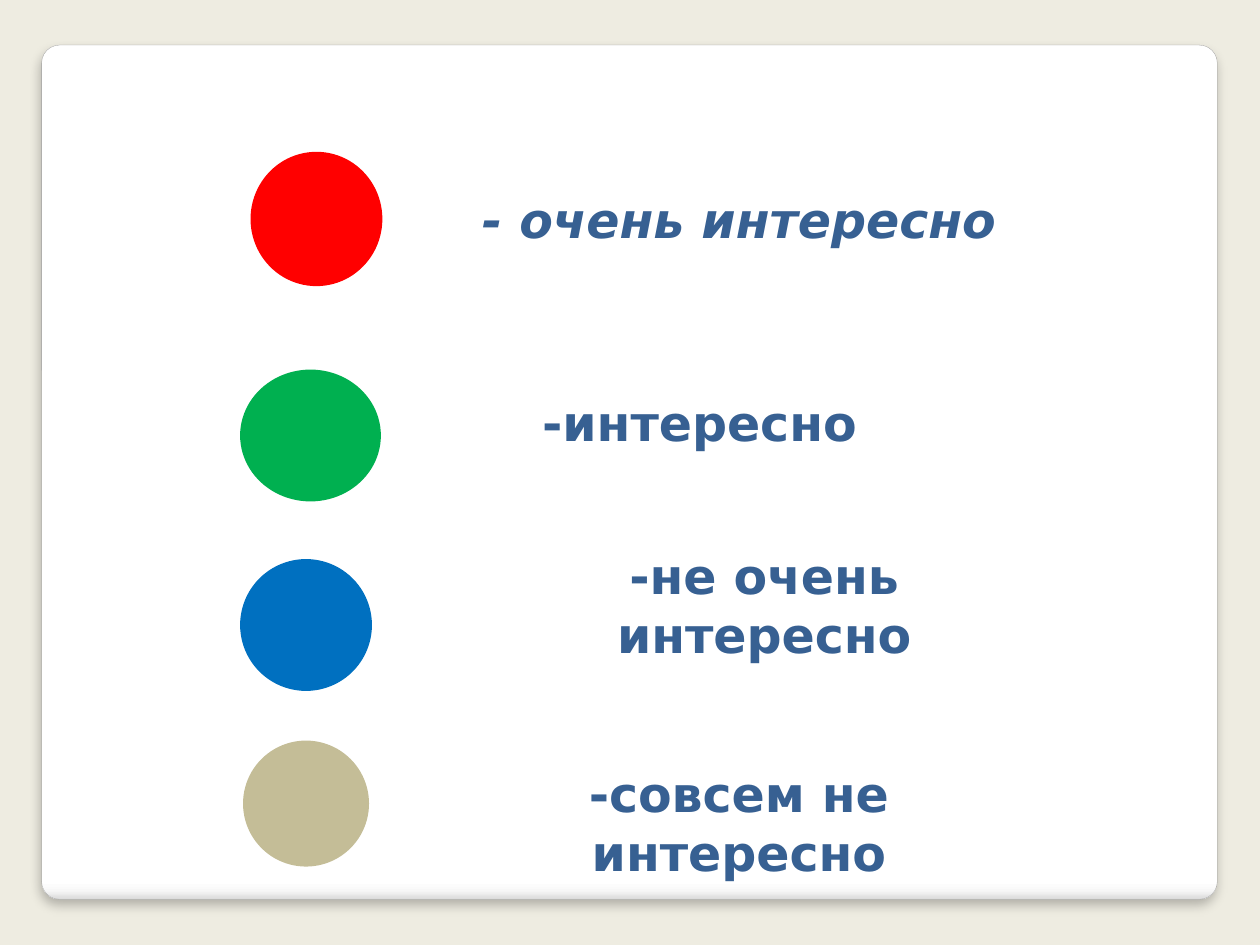
from collections import namedtuple
from dataclasses import dataclass

from lxml.etree import SubElement
from pptx import Presentation
from pptx.dml.color import RGBColor
from pptx.enum.shapes import MSO_SHAPE as Preset
from pptx.enum.text import MSO_ANCHOR as Anchor, PP_ALIGN as Align
from pptx.oxml.ns import qn
from pptx.util import Cm, Pt


@dataclass(frozen=True)
class Theme:
    background: str = "EEECE1"
    card_stops: tuple = ((0, "FFFFFF"), (98, "FFFFFF"), (99, "F7F7F7"), (100, "DADADA"))
    card_edge: str = "A4A4A4"
    shadow: str = "000000"
    label: str = "376092"
    font: str = "DejaVu Sans"
    label_size: float = 28
    ring_width: float = 3.35
    edge_width: float = 0.16


THEME = Theme()
Box = namedtuple("Box", "left top width height")
Rating = namedtuple("Rating", "text color circle label ringed italic")

# All boxes are in centimetres; circles sit in the card, labels start from their circle
CARD = Box(0.84, 0.91, 23.7, 17.22)
RATINGS = (
    Rating("- очень интересно", "FF0000", Box(4.27, 2.21, 2.54, 2.59),
           Box(3.79, 0, 11.99, 2.59), True, True),
    Rating("-интересно", "00B050", Box(4.06, 6.6, 2.72, 2.54),
           Box(4.4, -0.58, 9.6, 3.15), True, False),
    Rating("-не очень интересно", "0070C0", Box(4.06, 10.42, 2.54, 2.54),
           Box(5.82, -0.41, 9.37, 2.54), True, False),
    Rating("-совсем не интересно", "C4BD97", Box(4.06, 14.02, 2.54, 2.54),
           Box(5.51, 0.38, 8.97, 2.54), False, False),
)


def rgb(code):
    return RGBColor.from_string(code)


def within(outer, inner):
    return inner._replace(left=outer.left + inner.left, top=outer.top + inner.top)


def lengths(box):
    return [Cm(value) for value in box]


def add_card(slide, box):
    card = slide.shapes.add_shape(Preset.ROUNDED_RECTANGLE, *lengths(box))
    card.adjustments[0] = 0.021
    card.line.color.rgb = rgb(THEME.card_edge)
    card.line.width = Pt(THEME.edge_width)

    # Vertical gradient that darkens at the bottom edge
    card.fill.gradient()
    card.fill.gradient_angle = 270
    properties = card._element.spPr
    stops = properties.find(qn("a:gradFill")).find(qn("a:gsLst"))
    for stop in list(stops):
        stops.remove(stop)
    for position, color in THEME.card_stops:
        stop = SubElement(stops, qn("a:gs"), pos=str(position * 1000))
        SubElement(stop, qn("a:srgbClr"), val=color)

    # Soft shadow below
    card.shadow.inherit = False
    shadow = SubElement(properties.find(qn("a:effectLst")), qn("a:outerShdw"),
                        blurRad=str(Pt(6)), dist=str(Pt(4)), dir="5400000",
                        algn="tl", rotWithShape="0")
    tint = SubElement(shadow, qn("a:srgbClr"), val=THEME.shadow)
    SubElement(tint, qn("a:alpha"), val="25000")


def add_rating(slide, box, rating):
    # Colour mark
    circle = slide.shapes.add_shape(Preset.OVAL, *lengths(box))
    circle.shadow.inherit = False
    circle.fill.solid()
    circle.fill.fore_color.rgb = rgb(rating.color)
    if rating.ringed:
        circle.line.color.rgb = rgb(rating.color)
        circle.line.width = Pt(THEME.ring_width)
    else:
        circle.line.fill.background()

    # Meaning of the colour
    label = slide.shapes.add_textbox(*lengths(within(box, rating.label)))
    frame = label.text_frame
    frame.word_wrap = True
    frame.vertical_anchor = Anchor.MIDDLE
    frame.text = rating.text
    paragraph = frame.paragraphs[0]
    paragraph.alignment = Align.CENTER
    font = paragraph.runs[0].font
    font.name = THEME.font
    font.size = Pt(THEME.label_size)
    font.bold = True
    font.italic = rating.italic
    font.color.rgb = rgb(THEME.label)


def main():
    deck = Presentation()
    deck.slide_width, deck.slide_height = Cm(25.4), Cm(19.05)
    slide = deck.slides.add_slide(deck.slide_layouts[6])
    slide.background.fill.solid()
    slide.background.fill.fore_color.rgb = rgb(THEME.background)
    add_card(slide, CARD)
    for rating in RATINGS:
        add_rating(slide, within(CARD, rating.circle), rating)
    deck.save("out.pptx")


if __name__ == "__main__":
    main()
